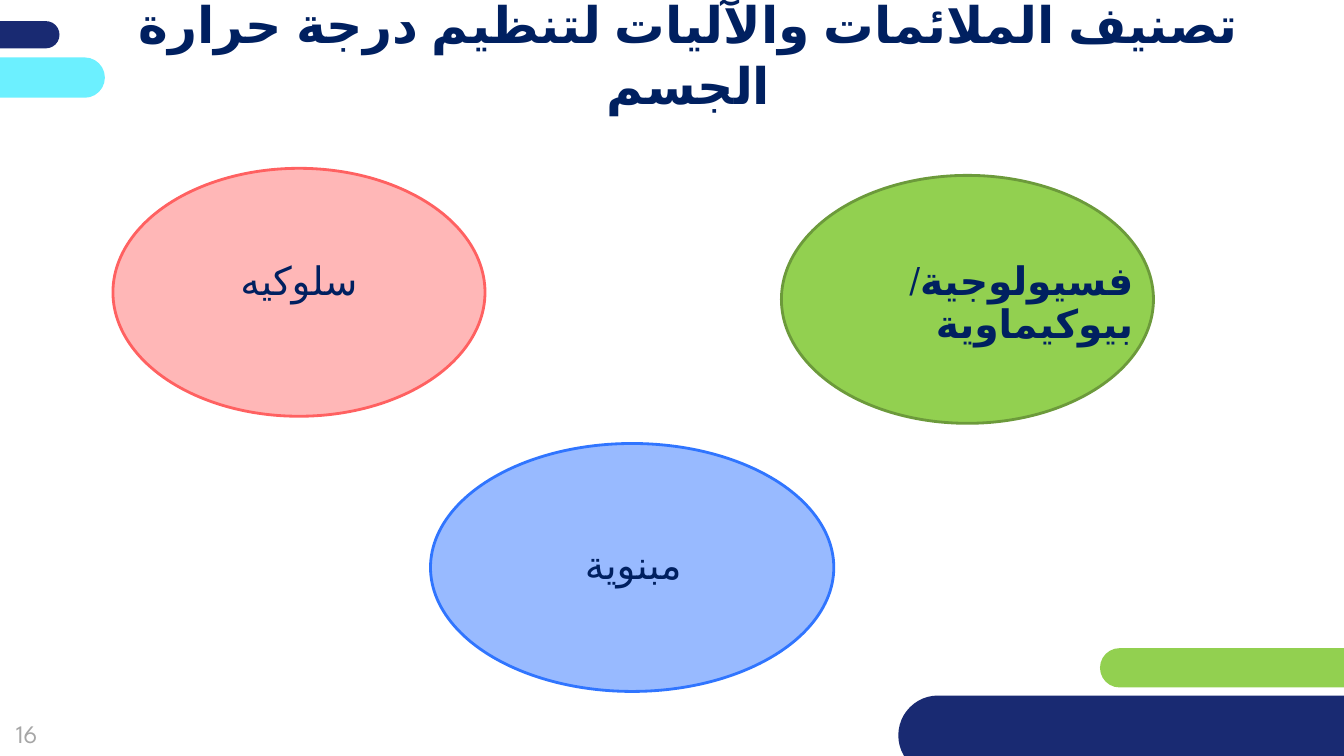
from dataclasses import dataclass
from pptx import Presentation
from pptx.dml.color import RGBColor as Color
from pptx.enum.shapes import MSO_SHAPE as Kind
from pptx.enum.text import MSO_ANCHOR as Anchor, MSO_AUTO_SIZE as Fit, PP_ALIGN as Align
from pptx.oxml.ns import qn
from pptx.util import Inches, Pt


@dataclass(frozen=True)
class Theme:
    navy: str = "192A72"
    ink: str = "002060"
    green: str = "92D050"
    moss: str = "6C9A3B"
    cyan: str = "6CF0FF"
    sky: str = "98BAFF"
    blue: str = "3075FF"
    rose: str = "FFB7B7"
    red: str = "FF6161"
    gray: str = "A6A6A6"
    font: str = "Arial"
    digit: str = "League Spartan"
    head: int = 36
    body: int = 28
    small: int = 18


def write(shape, text, size, color, font, bold=False, align=Align.CENTER,
          anchor=Anchor.MIDDLE, rtl=True, indent=0, space=1.0, after=0):
    frame = shape.text_frame
    frame.word_wrap = True
    frame.auto_size = Fit.NONE
    frame.vertical_anchor = anchor
    para = frame.paragraphs[0]
    para.alignment = align
    para.line_spacing = space
    para.space_before = Pt(0)
    para.space_after = Pt(after)
    props = para._p.get_or_add_pPr()
    props.set("rtl", str(int(rtl)))
    props.set("marL", str(Inches(indent)))
    props.set("indent", "0")
    props.append(props.makeelement(qn("a:buNone"), {}))
    run = para.add_run()
    run.text = text
    run.font.size = Pt(size)
    run.font.bold = bold
    run.font.name = font
    run.font.color.rgb = Color.from_string(color)
    if rtl:
        run._r.get_or_add_rPr().set("lang", "ar-SA")


class Deck:
    def __init__(self, theme):
        self.theme = theme
        self.file = Presentation()
        self.file.slide_width = Inches(13.33)
        self.file.slide_height = Inches(7.5)
        self.slide = self.file.slides.add_slide(self.file.slide_layouts[1])

    def shape(self, kind, box, fill, line=None):
        item = self.slide.shapes.add_shape(kind, *map(Inches, box))
        item.shadow.inherit = False
        item.fill.solid()
        item.fill.fore_color.rgb = Color.from_string(fill)
        if line:
            item.line.color.rgb = Color.from_string(line)
            item.line.width = Pt(2)
        else:
            item.line.fill.background()
        return item

    def bar(self, box, fill):
        self.shape(Kind.ROUNDED_RECTANGLE, box, fill).adjustments[0] = 0.5

    def oval(self, box, fill, line):
        self.shape(Kind.OVAL, box, fill, line)

    def holder(self, index, box):
        item = self.slide.placeholders[index]
        item.left, item.top, item.width, item.height = map(Inches, box)
        item.element.getparent().append(item.element)
        return item

    def title(self, text, box):
        look = self.theme
        write(self.holder(0, box), text, look.head, look.ink, look.font, bold=True)

    def label(self, item, text, **form):
        look = self.theme
        write(item, text, look.body, look.ink, look.font, anchor=Anchor.TOP,
              space=0.9, after=6, **form)

    def text(self, box):
        return self.slide.shapes.add_textbox(*map(Inches, box))

    def number(self, text, box):
        look = self.theme
        write(self.text(box), text, look.small, look.gray, look.digit, rtl=False)


def main():
    look = Theme()
    deck = Deck(look)
    for box, fill in (
        ((-2.66, 0.21, 3.25, 0.27), look.navy),
        ((10.91, 6.43, 5.21, 0.39), look.green),
        ((-2.21, 0.57, 3.25, 0.4), look.cyan),
        ((8.91, 6.9, 5.66, 0.79), look.navy),
    ):
        deck.bar(box, fill)
    deck.number("16", (-0.18, 6.99, 0.89, 0.57))
    deck.title("تصنيف الملائمات والآليات لتنظيم درجة حرارة الجسم",
               (1.17, 0, 11.32, 1.07))

    deck.oval((7.75, 1.74, 3.69, 2.46), look.green, look.moss)
    deck.label(deck.holder(1, (7.86, 2.55, 3.59, 0.54)),
               "فسيولوجية/ بيوكيماوية", bold=True, align=Align.RIGHT, indent=0.11)

    deck.oval((4.27, 4.4, 4, 2.46), look.sky, look.blue)
    deck.label(deck.shape(Kind.RECTANGLE, (4.39, 5.36, 3.78, 0.54), look.sky),
               "مبنوية")

    deck.oval((1.12, 1.67, 3.69, 2.46), look.rose, look.red)
    deck.label(deck.text((1.17, 2.55, 3.59, 0.54)), "سلوكيه")
    deck.file.save("out.pptx")


if __name__ == "__main__":
    main()
